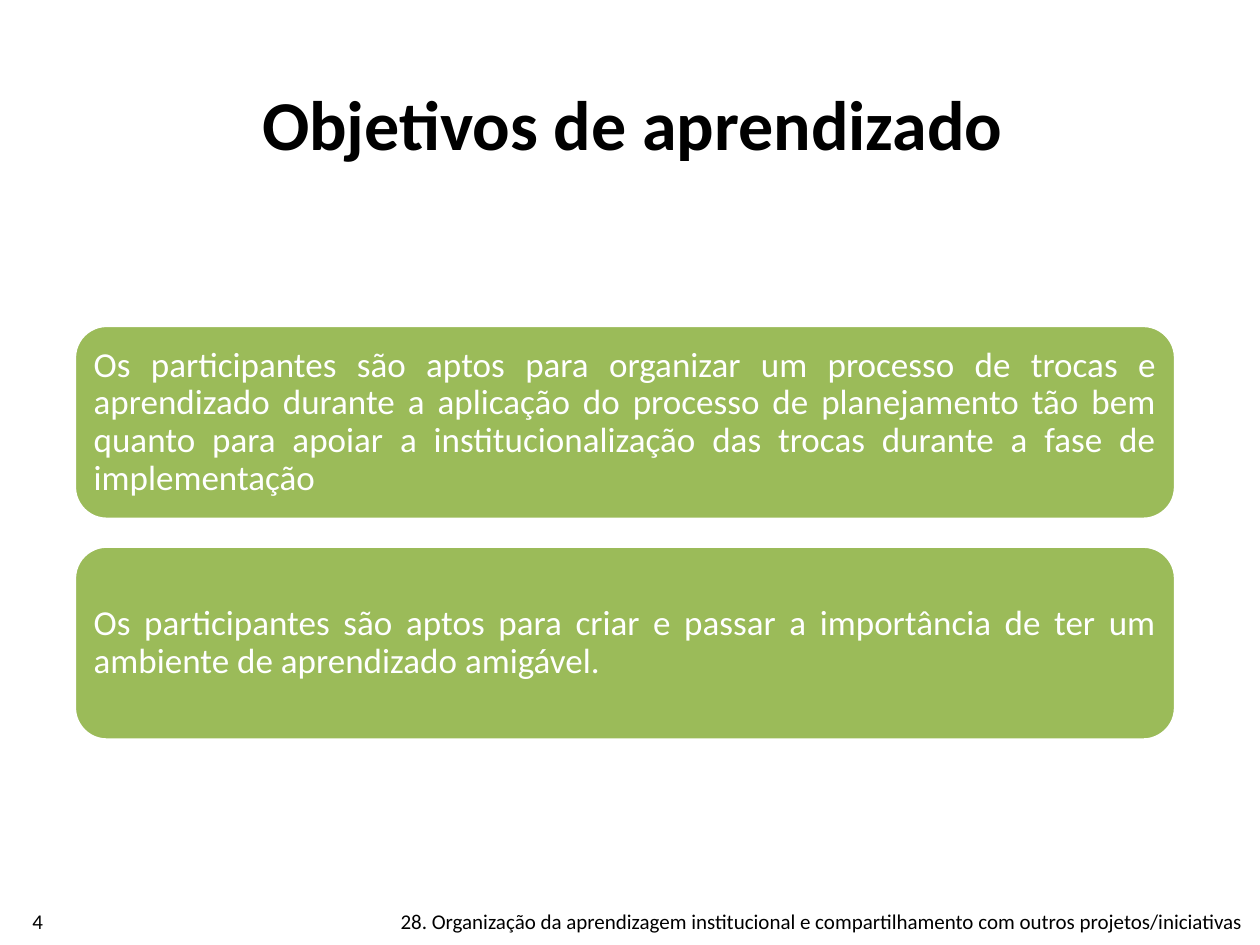
from pptx import Presentation
from pptx import util as u
from pptx.dml.color import RGBColor
from pptx.enum import shapes, text

FONT = "Calibri"
GREEN, WHITE, BLACK = "9BBB59", "FFFFFF", "000000"

TITLE = "Objetivos de aprendizado"
OBJECTIVES = [
    "Os participantes são aptos para organizar um processo de trocas e "
    "aprendizado durante a aplicação do processo de planejamento tão bem "
    "quanto para apoiar a institucionalização das trocas durante a fase de "
    "implementação",
    "Os participantes são aptos para criar e passar a importância de ter um "
    "ambiente de aprendizado amigável.",
]
PAGE = "4"
FOOTER = ("28. Organização da aprendizagem institucional e compartilhamento "
          "com outros projetos/iniciativas ")


def rgb(value):
    return RGBColor.from_string(value)


def write(sp, content, size, color, align, bold=False):
    """Fill a shape with one vertically centred paragraph and return it."""
    tf = sp.text_frame
    tf.word_wrap = True
    tf.vertical_anchor = text.MSO_ANCHOR.MIDDLE
    tf.text = content
    p = tf.paragraphs[0]
    p.alignment = align
    f = p.runs[0].font
    f.name, f.size, f.bold = FONT, u.Pt(size), bold
    f.color.rgb = rgb(color)
    return p


def add_label(s, box, content, size, align, bold=False):
    sp = s.shapes.add_textbox(*(u.Cm(v) for v in box))
    write(sp, content, size, BLACK, align, bold)


def add_card(s, box, content):
    sp = s.shapes.add_shape(shapes.MSO_SHAPE.ROUNDED_RECTANGLE,
                            *(u.Cm(v) for v in box))
    sp.shadow.inherit = False
    sp.fill.solid()
    sp.fill.fore_color.rgb = rgb(GREEN)
    sp.line.color.rgb = rgb(WHITE)
    sp.line.width = u.Pt(2)
    tf = sp.text_frame
    tf.margin_left = tf.margin_right = u.Cm(0.2)
    tf.margin_top = tf.margin_bottom = u.Cm(0.2)
    p = write(sp, content, 20, WHITE, text.PP_ALIGN.JUSTIFY)
    p.line_spacing = 0.9


def add_objectives(s, box, items, gap=0.54):
    """Stack equal cards from top to bottom of the box."""
    left, top, width, height = box
    card = (height - gap * (len(items) - 1)) / len(items)
    for i, item in enumerate(items):
        add_card(s, (left, top + i * (card + gap), width, card), item)


def add_footer(s, box):
    left, top, width, height = box
    number, start = 1.52, 3.5
    add_label(s, (left, top, number, height), PAGE, 12, text.PP_ALIGN.CENTER)
    add_label(s, (left + start, top, width - start, height), FOOTER, 12,
              text.PP_ALIGN.RIGHT)


def main():
    prs = Presentation()
    prs.slide_width, prs.slide_height = u.Cm(25.4), u.Cm(19.05)
    s = prs.slides.add_slide(prs.slide_layouts[6])
    add_label(s, (3.6, 0.97, 18.3, 3), TITLE, 40, text.PP_ALIGN.CENTER, True)
    add_objectives(s, (1.5, 6.56, 22.2, 8.36), OBJECTIVES)
    add_footer(s, (0, 18.08, 25.4, 0.97))
    prs.save("out.pptx")


if __name__ == "__main__":
    main()
